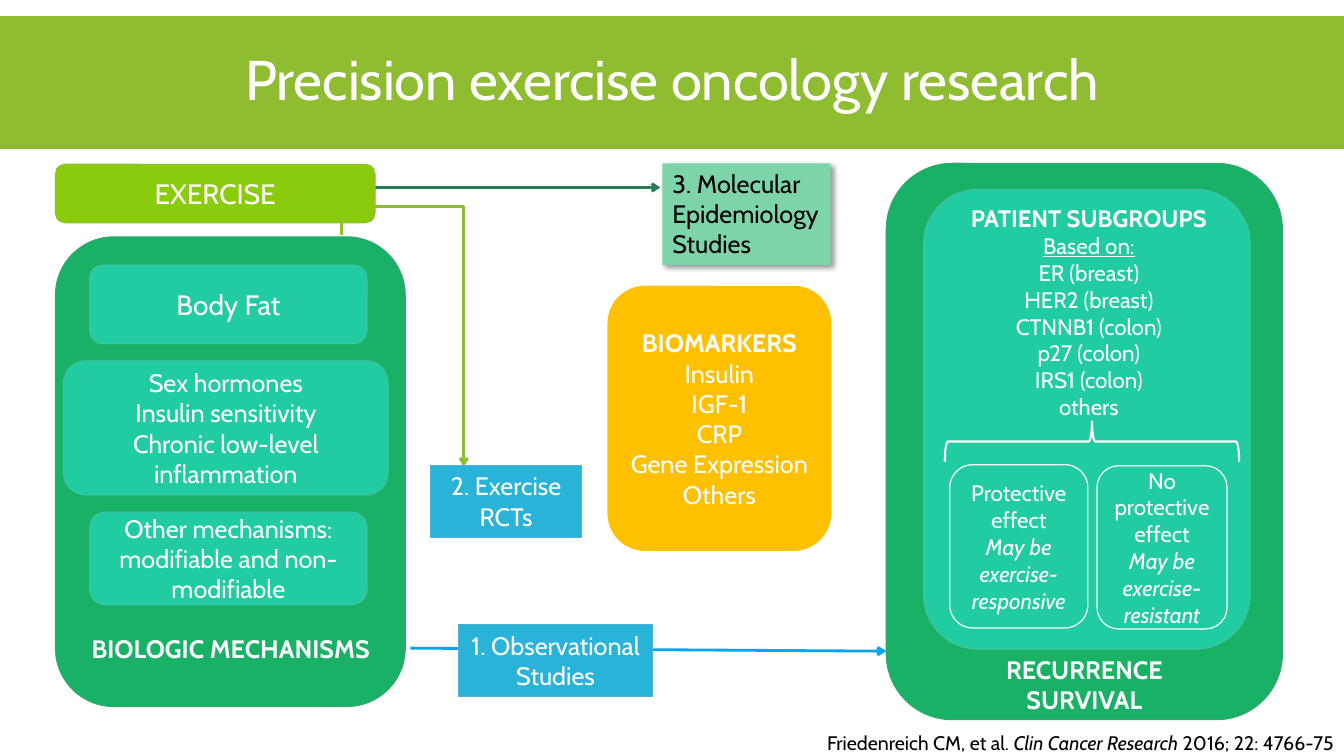
"""Build a slide on precision exercise oncology research."""
from pptx import Presentation
from pptx.dml.color import RGBColor
from pptx.enum.shapes import MSO_CONNECTOR, MSO_SHAPE
from pptx.enum.text import MSO_ANCHOR, PP_ALIGN
from pptx.oxml import parse_xml
from pptx.oxml.ns import nsdecls, qn
from pptx.util import Inches, Pt

RECT, ROUND = MSO_SHAPE.RECTANGLE, MSO_SHAPE.ROUNDED_RECTANGLE
BRACE = MSO_SHAPE.LEFT_BRACE
STRAIGHT, ELBOW = MSO_CONNECTOR.STRAIGHT, MSO_CONNECTOR.ELBOW
TOP, MIDDLE = MSO_ANCHOR.TOP, MSO_ANCHOR.MIDDLE
LEFT, CENTER, RIGHT = PP_ALIGN.LEFT, PP_ALIGN.CENTER, PP_ALIGN.RIGHT

FONT = "Cabin"
WHITE = RGBColor(0xFF, 0xFF, 0xFF)
BLACK = RGBColor(0x00, 0x00, 0x00)
LIME = RGBColor(0x8E, 0xBD, 0x31)
BRIGHT_LIME = RGBColor(0x8B, 0xCB, 0x0D)
GREEN = RGBColor(0x19, 0xB1, 0x65)
GREEN_EDGE = RGBColor(0x37, 0xA7, 0x6F)
TEAL = RGBColor(0x21, 0xCC, 0xA3)
TEAL_EDGE = RGBColor(0x44, 0xC1, 0xA3)
DARK_GREEN = RGBColor(0x29, 0x7D, 0x53)
MINT = RGBColor(0x7D, 0xD4, 0xA9)
AMBER = RGBColor(0xFF, 0xC0, 0x00)
BLUE = RGBColor(0x2A, 0xB3, 0xD9)
BLUE_EDGE = RGBColor(0x4E, 0xB3, 0xCF)
SKY = RGBColor(0x08, 0xA5, 0xEF)


def write(s, lines, size=18, color=WHITE, align=CENTER, anchor=TOP):
    """Fill a shape with paragraphs, each a string or a list of runs."""
    tf = s.text_frame
    tf.word_wrap = True
    tf.vertical_anchor = anchor
    tf.margin_left = tf.margin_right = Inches(0.1)
    tf.margin_top = tf.margin_bottom = Inches(0.05)
    for i, line in enumerate(lines):
        p = tf.paragraphs[0] if i == 0 else tf.add_paragraph()
        p.alignment = align
        for text in [line] if isinstance(line, str) else line:
            r = p.add_run()
            r.text = text
            r.font.name = FONT
            r.font.size = Pt(size)
            r.font.color.rgb = color
    return tf


def add_box(slide, kind, at, fill=None, edge=None, width=0.75):
    """Add a preset shape without shadow."""
    s = slide.shapes.add_shape(kind, *map(Inches, at))
    s.shadow.inherit = False
    if fill is None:
        s.fill.background()
    else:
        s.fill.solid()
        s.fill.fore_color.rgb = fill
    if edge is None:
        s.line.fill.background()
    else:
        s.line.color.rgb = edge
        s.line.width = Pt(width)
    return s


def add_label(slide, at, lines, **style):
    """Add a text box and return its text frame."""
    return write(slide.shapes.add_textbox(*map(Inches, at)), lines, **style)


def add_line(slide, start, end, color, kind=STRAIGHT, arrow=True):
    """Add a connector, with an arrowhead at its end if wanted."""
    s = slide.shapes.add_connector(kind, *map(Inches, start + end))
    s.line.color.rgb = color
    s.line.width = Pt(2)
    sp_pr = s._element.spPr
    if kind == ELBOW:
        sp_pr.find(qn("a:prstGeom")).set("prst", "bentConnector2")
    if arrow:
        s.line._get_or_add_ln().append(
            parse_xml(f'<a:tailEnd {nsdecls("a")} type="arrow"/>'))
    sp_pr.append(parse_xml(f'<a:effectLst {nsdecls("a")}/>'))


def add_shadow(s):
    """Give a shape a soft shadow to the lower right."""
    s._element.spPr.find(qn("a:effectLst")).append(parse_xml(
        f'<a:outerShdw {nsdecls("a")} blurRad="{Pt(4)}" dist="{Pt(3)}" '
        'dir="2700000" algn="tl" rotWithShape="0"><a:srgbClr val="000000">'
        '<a:alpha val="40000"/></a:srgbClr></a:outerShdw>'))


def add_title(slide):
    """Place the title over a full-width band."""
    add_box(slide, RECT, (0, 0.16, 13.33, 1.32), LIME)
    title = slide.shapes.title
    title.left, title.top = Inches(0), Inches(0.39)
    title.width, title.height = Inches(13.33), Inches(0.77)
    write(title, ["Precision exercise oncology research"], size=40)
    slide.shapes._spTree.append(title._element)


def add_mechanisms(slide):
    """Add the panel of biologic mechanisms."""
    add_box(slide, ROUND, (0.55, 2.35, 3.47, 4.66), GREEN, GREEN_EDGE)
    mechanisms = [
        ((0.89, 2.63, 2.75, 0.78), 20, ["Body Fat"]),
        ((0.63, 3.58, 3.22, 1.33), 18,
         ["Sex hormones", "Insulin sensitivity",
          "Chronic low-level inflammation"]),
        ((0.89, 5.08, 2.75, 0.92), 18,
         ["Other mechanisms: modifiable and non-modifiable"]),
    ]
    for at, size, lines in mechanisms:
        s = add_box(slide, ROUND, at, TEAL, TEAL_EDGE)
        write(s, lines, size=size, anchor=MIDDLE)
    tf = add_label(slide, (0.81, 6.23, 3, 0.4), ["BIOLOGIC MECHANISMS"],
                   align=LEFT)
    tf.paragraphs[0].runs[0].font.bold = True


def add_outcomes(slide):
    """Add the panel of patient subgroups and their outcomes."""
    add_box(slide, ROUND, (8.79, 1.62, 3.93, 5.52), GREEN, GREEN_EDGE)
    add_box(slide, ROUND, (9.16, 1.88, 3.24, 4.56), TEAL, TEAL_EDGE)
    effects = [
        ((9.42, 4.61, 1.37, 1.62),
         ["Protective effect", "May be exercise-responsive"]),
        ((10.88, 4.62, 1.29, 1.62),
         ["No protective effect", "May be exercise-resistant"]),
    ]
    for at, lines in effects:
        s = add_box(slide, ROUND, at, edge=WHITE, width=0.85)
        tf = write(s, lines, size=16, anchor=MIDDLE)
        tf.paragraphs[1].runs[0].font.italic = True
    tf = add_label(slide, (9.34, 6.44, 2.83, 0.71), ["RECURRENCE SURVIVAL"])
    tf.paragraphs[0].runs[0].font.bold = True
    tf = add_label(slide, (9.52, 1.97, 2.56, 2.27), [
        "PATIENT SUBGROUPS", "Based on:", "ER (breast)", "HER2 (breast)",
        "CTNNB1 (colon)", "p27 (colon)", "IRS1 (colon)", "others"], size=16)
    heading = tf.paragraphs[0].runs[0].font
    heading.bold, heading.size = True, Pt(17)
    tf.paragraphs[1].runs[0].font.underline = True
    brace = add_box(slide, BRACE, (10.63, 2.92, 0.4, 2.92), edge=WHITE,
                    width=1.5)
    brace.rotation = 90


def add_studies(slide):
    """Add the three kinds of study."""
    for at, text in [((4.55, 6.2, 1.92, 0.71), "1. Observational Studies"),
                     ((4.27, 4.62, 1.5, 0.71), "2. Exercise RCTs")]:
        write(add_box(slide, RECT, at, BLUE, BLUE_EDGE), [text])
    s = add_box(slide, RECT, (6.57, 1.62, 1.67, 1.01), MINT)
    add_shadow(s)
    write(s, ["3. Molecular Epidemiology Studies"], color=BLACK, align=LEFT)


def main():
    """Build the slide and save it."""
    prs = Presentation()
    prs.slide_width, prs.slide_height = Inches(13.33), Inches(7.5)
    slide = prs.slides.add_slide(prs.slide_layouts[5])
    add_title(slide)
    add_line(slide, (2.38, 2.05), (4.6, 4.63), LIME, kind=ELBOW)
    add_line(slide, (3.72, 1.86), (6.55, 1.86), DARK_GREEN)
    add_outcomes(slide)
    exercise = add_box(slide, ROUND, (0.55, 1.63, 3.17, 0.58),
                       BRIGHT_LIME, LIME)
    write(exercise, ["EXERCISE"], size=20, anchor=MIDDLE)
    biomarkers = add_box(slide, ROUND, (6.03, 2.84, 2.21, 2.62), AMBER, AMBER)
    tf = write(biomarkers, ["BIOMARKERS", "Insulin", "IGF-1", "CRP",
                            "Gene Expression", "Others"], anchor=MIDDLE)
    tf.paragraphs[0].runs[0].font.bold = True
    add_mechanisms(slide)
    add_line(slide, (4.07, 6.43), (8.79, 6.46), SKY)
    add_studies(slide)
    add_line(slide, (3.39, 2.17), (3.39, 2.33), LIME, arrow=False)
    tf = add_label(slide, (6.83, 7.2, 6.5, 0.34), [
        ["Friedenreich CM, et al. ", "Clin Cancer Research ",
         "2016; 22: 4766-75"]], size=14, color=BLACK, align=RIGHT)
    tf.paragraphs[0].runs[1].font.italic = True
    prs.save("out.pptx")


if __name__ == "__main__":
    main()
